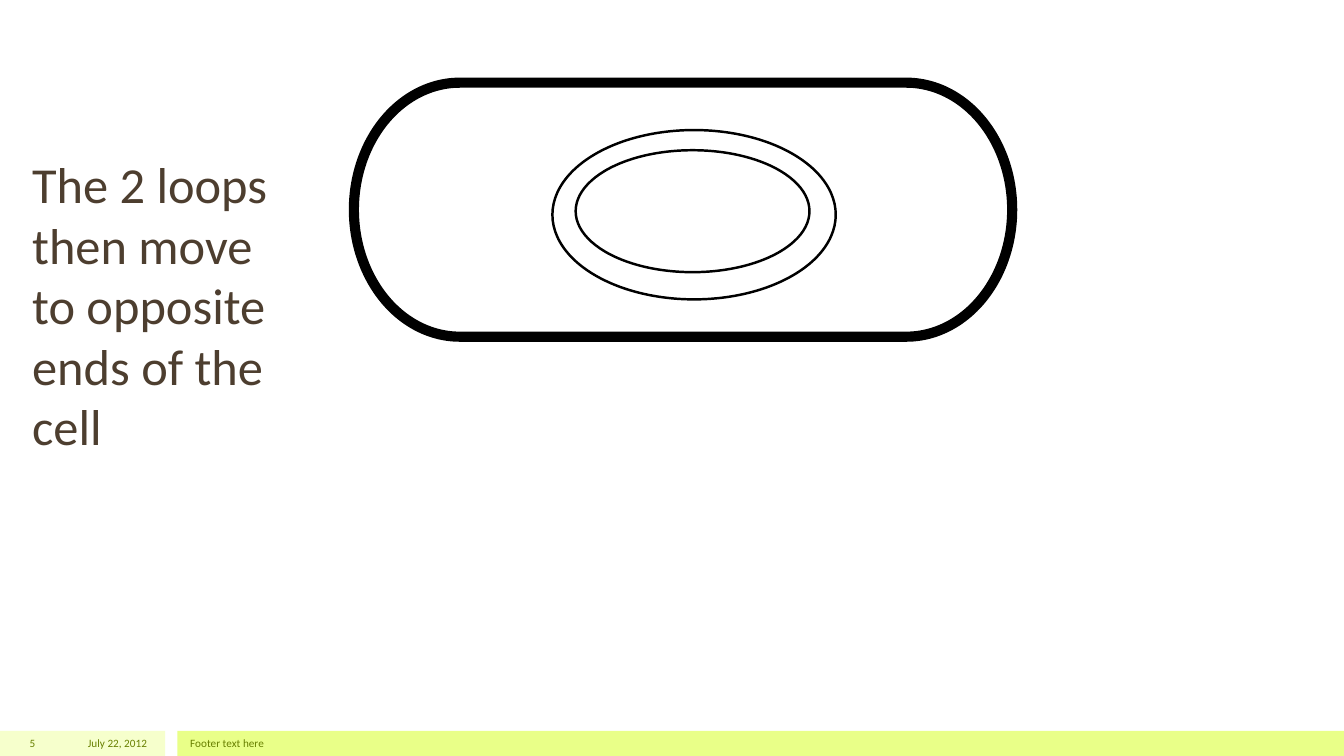
from dataclasses import dataclass

from pptx import Presentation
from pptx.dml.color import RGBColor
from pptx.enum.shapes import MSO_SHAPE as SHAPE
from pptx.enum.text import MSO_ANCHOR as ANCHOR, MSO_AUTO_SIZE as AUTO, PP_ALIGN as ALIGN
from pptx.util import Inches, Pt


@dataclass(frozen=True)
class Theme:
    font: str = "Calibri"
    title_color: str = "4D3E2F"
    footer_color: str = "688000"
    pale_bar: str = "F6FFCC"
    bright_bar: str = "E9FF88"
    outline: str = "000000"
    title_size: float = 36
    footer_size: float = 8
    wall_width: float = 7.25
    loop_width: float = 1.75


class SlideBuilder:
    COLUMNS = 48
    ROWS = 30

    def __init__(self, prs, theme):
        self.theme = theme
        self.slide = prs.slides.add_slide(prs.slide_layouts[5])
        self.col = prs.slide_width / self.COLUMNS
        self.row = prs.slide_height / self.ROWS

    def box(self, x, y, w, h):
        return (round(x * self.col), round(y * self.row),
                round(w * self.col), round(h * self.row))

    def set_text(self, sp, text, size, color, align, anchor):
        tf = sp.text_frame
        tf.word_wrap = True
        tf.auto_size = AUTO.NONE
        tf.vertical_anchor = anchor
        p = tf.paragraphs[0]
        p.alignment = align
        r = p.add_run()
        r.text = text
        r.font.name = self.theme.font
        r.font.size = Pt(size)
        r.font.color.rgb = RGBColor.from_string(color)

    def title(self, text, *cells):
        sp = self.slide.shapes.title
        sp.left, sp.top, sp.width, sp.height = self.box(*cells)
        self.set_text(sp, text, self.theme.title_size, self.theme.title_color,
                      ALIGN.LEFT, ANCHOR.TOP)

    def bar(self, color, x, w):
        sp = self.slide.shapes.add_shape(SHAPE.RECTANGLE, *self.box(x, self.ROWS - 1, w, 1))
        sp.shadow.inherit = False
        sp.fill.solid()
        sp.fill.fore_color.rgb = RGBColor.from_string(color)
        sp.line.fill.background()

    def footer(self, text, x, w, align):
        sp = self.slide.shapes.add_textbox(*self.box(x, self.ROWS - 1, w, 1))
        self.set_text(sp, text, self.theme.footer_size, self.theme.footer_color,
                      align, ANCHOR.MIDDLE)

    def outline(self, kind, width, *cells):
        sp = self.slide.shapes.add_shape(kind, *self.box(*cells))
        sp.shadow.inherit = False
        sp.fill.background()
        sp.line.color.rgb = RGBColor.from_string(self.theme.outline)
        sp.line.width = Pt(width)


def main():
    prs = Presentation()
    prs.slide_width, prs.slide_height = Inches(13.33), Inches(7.5)
    theme = Theme()
    s = SlideBuilder(prs, theme)

    s.bar(theme.pale_bar, 0, 5.9)
    s.bar(theme.bright_bar, 6.34, 41.66)
    s.footer("July 22, 2012", 1.69, 3.92, ALIGN.RIGHT)
    s.footer("Footer text here", 6.44, 36, ALIGN.LEFT)
    s.footer("5", 0, 1.62, ALIGN.RIGHT)

    s.title("The 2 loops then move to opposite ends of the cell", 0.79, 5.88, 9.9, 12.52)
    s.outline(SHAPE.FLOWCHART_TERMINATOR, theme.wall_width, 12.64, 3.28, 23.51, 10.08)
    s.outline(SHAPE.OVAL, theme.loop_width, 19.73, 5.16, 10.12, 6.72)
    s.outline(SHAPE.OVAL, theme.loop_width, 20.56, 5.96, 8.35, 4.84)

    prs.save("out.pptx")


if __name__ == "__main__":
    main()
